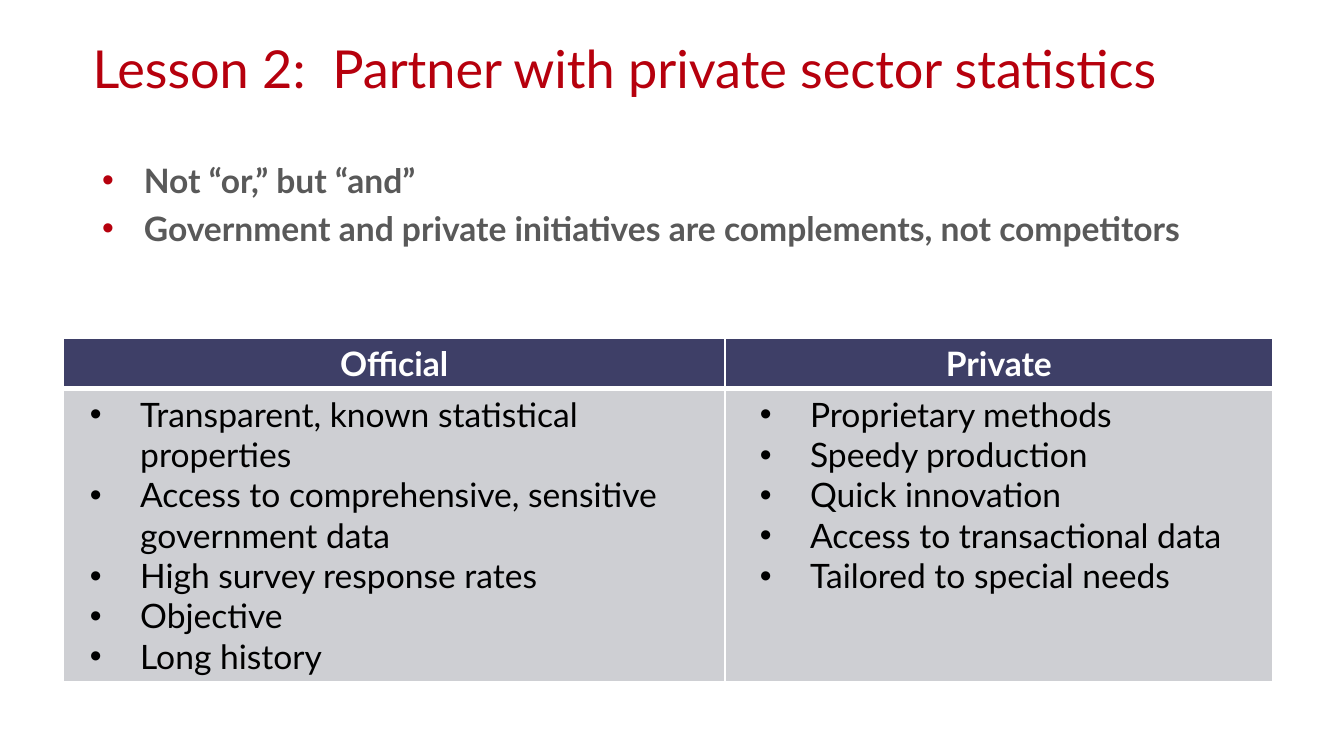
import pptx
import pptx.dml.color
import pptx.enum.text
import pptx.oxml
import pptx.oxml.ns
import pptx.util

Cm, Pt = pptx.util.Cm, pptx.util.Pt
RGBColor = pptx.dml.color.RGBColor
PP_ALIGN = pptx.enum.text.PP_ALIGN

RED = RGBColor(0xB6, 0x00, 0x0D)
GREY = RGBColor(0x59, 0x59, 0x59)
NAVY = RGBColor(0x3E, 0x3F, 0x67)
SILVER = RGBColor(0xCE, 0xCF, 0xD3)
WHITE = RGBColor(0xFF, 0xFF, 0xFF)
BLACK = RGBColor(0x00, 0x00, 0x00)

TITLE = "Lesson 2:  Partner with private sector statistics"
MESSAGES = [
    "Not “or,” but “and”",
    "Government and private initiatives are complements, not competitors",
]
# Heading, column width in cm, bullet text indent in cm, points
SOURCES = [
    ("Official", 12.5, 1.27, [
        "Transparent, known statistical properties",
        "Access to comprehensive, sensitive government data",
        "High survey response rates",
        "Objective",
        "Long history",
    ]),
    ("Private", 10.36, 1.43, [
        "Proprietary methods",
        "Speedy production",
        "Quick innovation",
        "Access to transactional data",
        "Tailored to special needs",
    ]),
]
ROW_HEIGHTS = [0.94, 5.54]

TITLE_FONT = {"name": "Lato", "size": Pt(28), "bold": False}
BODY_FONT = {"name": "Lato", "size": Pt(18), "bold": False}
BOLD_FONT = {**BODY_FONT, "bold": True}
CELL_MARGINS = {
    "margin_left": Cm(0.18), "margin_right": Cm(0.18),
    "margin_top": Cm(0.1), "margin_bottom": Cm(0.1),
}


def xml(markup):
    head, tail = markup.split(">", 1) if not markup.endswith("/>") else (markup[:-2], None)
    namespace = pptx.oxml.ns.nsdecls("a")
    text = f"{head} {namespace}/>" if tail is None else f"{head} {namespace}>{tail}"
    return pptx.oxml.parse_xml(text)


def write(frame, lines, font, color, **paragraph_format):
    """Put one paragraph per line into the frame and return the paragraphs."""
    frame.word_wrap = True
    for number, line in enumerate(lines):
        paragraph = frame.paragraphs[0] if number == 0 else frame.add_paragraph()
        for key, value in paragraph_format.items():
            setattr(paragraph, key, value)
        run = paragraph.add_run()
        run.text = line
        for key, value in font.items():
            setattr(run.font, key, value)
        run.font.color.rgb = color
    return frame.paragraphs


def add_bullets(paragraphs, indent, hanging, color):
    for paragraph in paragraphs:
        properties = paragraph._p.get_or_add_pPr()
        properties.set("marL", str(Cm(indent)))
        properties.set("indent", str(-Cm(hanging)))
        for markup in (
            f'<a:buClr><a:srgbClr val="{color}"/></a:buClr>',
            '<a:buFont typeface="Arial"/>',
            '<a:buChar char="•"/>',
        ):
            properties.append(xml(markup))


def style_cell(cell, fill, top, bottom):
    """Set the margins, fill and white borders, with top and bottom widths in points."""
    for key, value in CELL_MARGINS.items():
        setattr(cell, key, value)
    cell.fill.solid()
    cell.fill.fore_color.rgb = fill
    borders = {"lnL": 1, "lnR": 1, "lnT": top, "lnB": bottom}
    for position, (side, width) in enumerate(borders.items()):
        cell._tc.get_or_add_tcPr().insert(position, xml(
            f'<a:{side} w="{Pt(width)}"><a:solidFill>'
            f'<a:srgbClr val="{WHITE}"/></a:solidFill></a:{side}>'
        ))


presentation = pptx.Presentation()
presentation.slide_width, presentation.slide_height = Cm(25.4), Cm(14.28)
slide = presentation.slides.add_slide(presentation.slide_layouts[6])

title = slide.shapes.add_textbox(Cm(1.5), Cm(0.56), Cm(23.14), Cm(1.65))
write(title.text_frame, [TITLE], TITLE_FONT, RED)

messages = slide.shapes.add_textbox(Cm(1.5), Cm(2.74), Cm(22.56), Cm(10.87))
add_bullets(
    write(messages.text_frame, MESSAGES, BOLD_FONT, GREY, line_spacing=1.2),
    0.97, 0.79, RED,
)

table_width = sum(width for _, width, _, _ in SOURCES)
comparison = slide.shapes.add_table(
    len(ROW_HEIGHTS), len(SOURCES),
    Cm(1.2), Cm(6.38), Cm(table_width), Cm(sum(ROW_HEIGHTS)),
).table
for row, height in zip(comparison.rows, ROW_HEIGHTS):
    row.height = Cm(height)

for column, (heading, width, indent, points) in enumerate(SOURCES):
    comparison.columns[column].width = Cm(width)
    heading_cell, points_cell = (comparison.cell(row, column) for row in range(2))
    style_cell(heading_cell, NAVY, top=1, bottom=3)
    write(heading_cell.text_frame, [heading], BOLD_FONT, WHITE, alignment=PP_ALIGN.CENTER)
    style_cell(points_cell, SILVER, top=3, bottom=1)
    add_bullets(write(points_cell.text_frame, points, BODY_FONT, BLACK), indent, 0.95, BLACK)

presentation.save("out.pptx")
